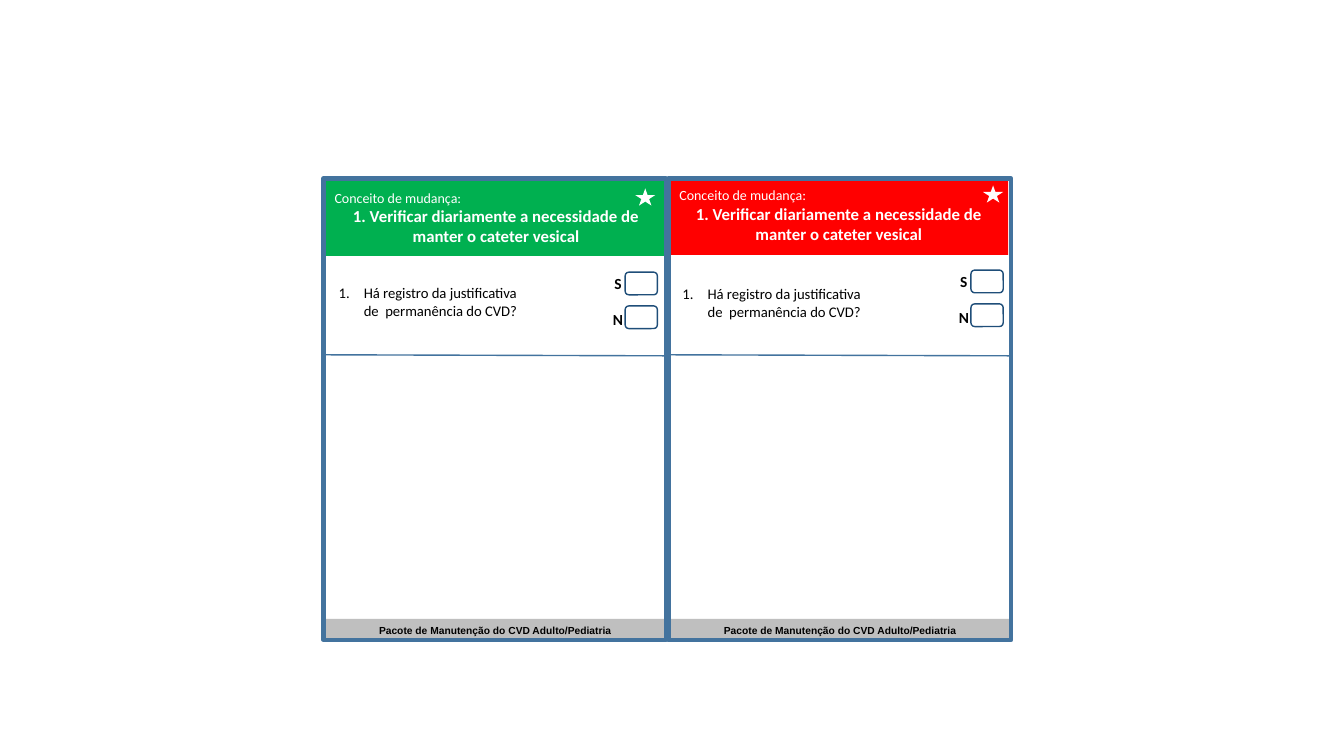
from lxml.etree import SubElement
from pptx import Presentation
from pptx.dml.color import RGBColor
from pptx.enum.shapes import MSO_CONNECTOR, MSO_SHAPE as SHAPE
from pptx.enum.text import MSO_ANCHOR as ANCHOR, MSO_AUTO_SIZE as FIT, PP_ALIGN as ALIGN
from pptx.oxml.ns import qn
from pptx.util import Inches, Pt

COLORS = {"green": "00B050", "red": "FF0000", "grey": "BFBFBF", "white": "FFFFFF",
          "black": "000000", "frame": "43739E", "box": "1F4E79"}
CARD_W, CARD_H, CARD_TOP = 3.4, 4.58, 1.77
CARDS = [
    {"left": 3.21, "color": "green", "header": (0.01, 0.01, 3.4), "header_bottom": 0.05,
     "question": (0.05, 0.97), "star": (3.09, 0.10), "answers": (2.80, 0.93)},
    {"left": 6.63, "color": "red", "header": (0.01, 0, 3.36), "header_bottom": 0.08,
     "question": (0.04, 0.98), "star": (3.12, 0.07), "answers": (2.81, 0.91)},
]


def rgb(name):
    """Return a palette colour."""
    return RGBColor.from_string(COLORS[name])


def add_shape(s, kind, box, fill=None, line=None, width=1):
    """Add a flat preset shape."""
    sp = s.shapes.add_shape(kind, *map(Inches, box))
    sp.shadow.inherit = False
    if fill:
        sp.fill.solid()
        sp.fill.fore_color.rgb = rgb(fill)
    else:
        sp.fill.background()
    if line:
        sp.line.color.rgb = rgb(line)
        sp.line.width = Pt(width)
    else:
        sp.line.fill.background()
    return sp


def add_box(s, box):
    """Add a text box without insets on its sides."""
    sp = s.shapes.add_textbox(*map(Inches, box))
    sp.text_frame.margin_left = sp.text_frame.margin_right = 0
    return sp


def write(sp, lines, color, font="Calibri", anchor=ANCHOR.MIDDLE, **frame):
    """Write lines of (text, size, bold, alignment) and return the first paragraph."""
    tf = sp.text_frame
    for name, value in {"word_wrap": True, "vertical_anchor": anchor, **frame}.items():
        setattr(tf, name, value)
    for i, (text, size, bold, align) in enumerate(lines):
        p = tf.add_paragraph() if i else tf.paragraphs[0]
        p.alignment = align
        r = p.add_run()
        r.text = text
        for name, value in {"name": font, "size": Pt(size), "bold": bold}.items():
            setattr(r.font, name, value)
        r.font.color.rgb = rgb(color)
    return tf.paragraphs[0]


def add_header(s, x, y, card):
    """Draw the coloured heading of a card."""
    dx, dy, w = card["header"]
    sp = add_shape(s, SHAPE.RECTANGLE, (x + dx, y + dy, w, 0.76), card["color"])
    write(sp, [("Conceito de mudança:", 10, False, ALIGN.LEFT),
               ("1. Verificar diariamente a necessidade de manter o cateter vesical",
                12, True, ALIGN.CENTER)],
          "white", margin_bottom=Inches(card["header_bottom"]))
    dx, dy = card["star"]
    add_shape(s, SHAPE.STAR_5_POINT, (x + dx, y + dy, 0.2, 0.17), "white")


def add_question(s, x, y):
    """Write the numbered question."""
    sp = s.shapes.add_textbox(*map(Inches, (x, y, 2.8, 0.51)))
    p = write(sp, [("Há registro da justificativa de\u00a0\u00a0permanência do CVD?",
                    10.5, False, ALIGN.LEFT)], "black")
    ppr = p._p.get_or_add_pPr()
    ppr.set("marL", str(Inches(0.25)))
    ppr.set("indent", str(-Inches(0.25)))
    SubElement(ppr, qn("a:buFont"), typeface="+mj-lt")
    SubElement(ppr, qn("a:buAutoNum"), type="arabicPeriod")


def add_answers(s, x, y):
    """Draw the yes and no tick boxes with their letters."""
    for i, letter in enumerate("SN"):
        top = y + i * 0.335
        add_shape(s, SHAPE.ROUNDED_RECTANGLE, (x + 0.19, top, 0.32, 0.225), line="box")
        sp = add_box(s, (x, top + 0.03 + i * 0.015, 0.24, 0.17))
        write(sp, [(letter, 11, True, ALIGN.CENTER)], "black", margin_top=0, margin_bottom=0)


def add_divider(s, x, y):
    """Draw the line under the question."""
    cx = s.shapes.add_connector(MSO_CONNECTOR.STRAIGHT,
                                *map(Inches, (x, y, x + CARD_W - 0.01, y + 0.01)))
    cx.line.color.rgb = rgb("frame")
    cx.line.width = Pt(1)
    SubElement(cx._element.spPr, qn("a:effectLst"))


def add_card(s, card):
    """Draw one card from its left edge."""
    x, y = card["left"], CARD_TOP
    footer = add_shape(s, SHAPE.RECTANGLE, (x, y + 4.37, CARD_W, 0.22), "grey")
    write(footer, [("Pacote de Manutenção do CVD Adulto/Pediatria", 7.3, True, ALIGN.CENTER)],
          "black", "Arial", ANCHOR.TOP, auto_size=FIT.SHAPE_TO_FIT_TEXT)
    add_header(s, x, y, card)
    dx, dy = card["question"]
    add_question(s, x + dx, y + dy)
    add_shape(s, SHAPE.RECTANGLE, (x, y, CARD_W, CARD_H), line="frame", width=3)
    add_divider(s, x, y + 1.75)
    dx, dy = card["answers"]
    add_answers(s, x + dx, y + dy)


def main():
    """Build the slide with both cards."""
    prs = Presentation()
    prs.slide_width, prs.slide_height = Inches(13.33), Inches(7.5)
    s = prs.slides.add_slide(prs.slide_layouts[6])
    for card in CARDS:
        add_card(s, card)
    prs.save("out.pptx")


if __name__ == "__main__":
    main()
